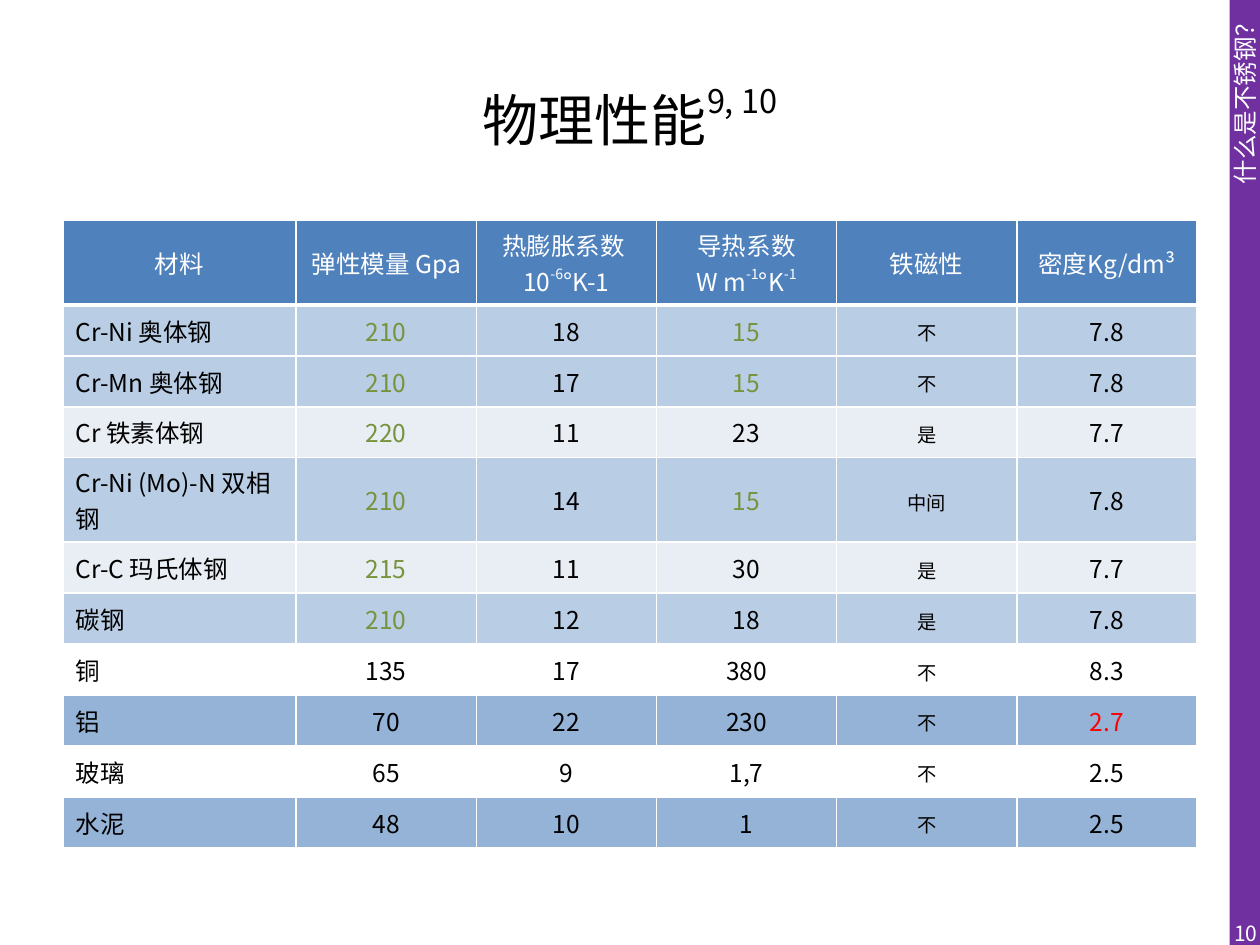
import pptx
import pptx.util
import pptx.dml.color
import pptx.enum.shapes
import pptx.enum.text
import pptx.oxml.ns
import lxml.etree

Inches = pptx.util.Inches
Align = pptx.enum.text.PP_ALIGN
Anchor = pptx.enum.text.MSO_ANCHOR
qn = pptx.oxml.ns.qn

FONT = "Noto Sans CJK SC"
HUES = {
    "white": "FFFFFF", "black": "000000", "purple": "7030A0",
    "head": "4F81BD", "pale": "B9CDE5", "grey": "E9EDF4",
    "blue": "95B3D7", "green": "77933C", "red": "FF0000",
}
HEAD = ["材料", "弹性模量 Gpa", "热膨胀系数 \n10^-6^°K-1",
        "导热系数\nW m^-1^°K^-1", "铁磁性", "密度Kg/dm³"]
ROWS = [
    ("pale", ["Cr-Ni 奥体钢", "210", "18", "15", "不", "7.8"]),
    ("pale", ["Cr-Mn 奥体钢", "210", "17", "15", "不", "7.8"]),
    ("grey", ["Cr 铁素体钢", "220", "11", "23", "是", "7.7"]),
    ("pale", ["Cr-Ni (Mo)-N 双相钢", "210", "14", "15", "中间", "7.8"]),
    ("grey", ["Cr-C 玛氏体钢", "215", "11", "30", "是", "7.7"]),
    ("pale", ["碳钢", "210", "12", "18", "是", "7.8"]),
    ("white", ["铜", "135", "17", "380", "不", "8.3"]),
    ("blue", ["铝", "70", "22", "230", "不", "2.7"]),
    ("white", ["玻璃", "65", "9", "1,7", "不", "2.5"]),
    ("blue", ["水泥", "48", "10", "1", "不", "2.5"]),
]
DATA = [("head", HEAD)] + ROWS
WIDTHS = [1.85] + [1.43] * 5
TOTAL = 4.98
TALL = 0.67
DOUBLE = (0, 4)
HIGH = (TOTAL - TALL * len(DOUBLE)) / (len(DATA) - len(DOUBLE))
MAGNET = 4
TINTS = {(row, 1): "green" for row in range(1, 7)}
TINTS.update({(row, 3): "green" for row in (1, 2, 4)})
TINTS[8, 5] = "red"


def shade(hue):
    return pptx.dml.color.RGBColor.from_string(HUES[hue])


def paint(fill, hue):
    fill.solid()
    fill.fore_color.rgb = shade(hue)


def write(frame, text, size=14, hue="black", align=Align.CENTER, space=None):
    para = frame.paragraphs[0]
    para.alignment = align
    if space:
        para.line_spacing = space
    for spot, part in enumerate(text.split("^")):
        for turn, line in enumerate(part.split("\n")):
            if turn:
                para.add_line_break()
                lxml.etree.SubElement(para._p[-1], qn("a:rPr"), sz=str(size * 100))
            if not line:
                continue
            run = para.add_run()
            run.text = line
            font = run.font
            font.size = pptx.util.Pt(size)
            font.color.rgb = shade(hue)
            font.name = FONT
            lxml.etree.SubElement(font._element, qn("a:ea"), typeface=FONT)
            if spot % 2:
                font._element.set("baseline", "50000")


def edge(cell, row):
    props = cell._tc.get_or_add_tcPr()
    sizes = {"L": 1, "R": 1, "T": 3 if row == 1 else 1, "B": 3 if row == 0 else 1}
    for spot, (side, size) in enumerate(sizes.items()):
        line = lxml.etree.Element(qn("a:ln" + side), w=str(pptx.util.Pt(size)))
        fill = lxml.etree.SubElement(line, qn("a:solidFill"))
        lxml.etree.SubElement(fill, qn("a:srgbClr"), val=HUES["white"])
        props.insert(spot, line)


def label(shape, text, **form):
    frame = shape.text_frame
    frame.word_wrap = True
    frame.vertical_anchor = Anchor.MIDDLE
    write(frame, text, **form)


def note(slide, text, place, **form):
    label(slide.shapes.add_textbox(*map(Inches, place)), text, **form)


def band(slide):
    bar = slide.shapes.add_shape(
        pptx.enum.shapes.MSO_SHAPE.RECTANGLE,
        Inches(9.76), 0, Inches(0.24), Inches(7.5))
    bar.shadow.inherit = False
    paint(bar.fill, "purple")
    bar.line.fill.background()
    label(bar, "什么是不锈钢？", hue="white", align=Align.RIGHT)
    bar.text_frame._txBody.bodyPr.set("vert", "vert270")


def grid(slide):
    table = slide.shapes.add_table(
        len(DATA), len(HEAD), Inches(0.5), Inches(1.75),
        Inches(sum(WIDTHS)), Inches(TOTAL)).table
    table.horz_banding = False
    for col, wide in zip(table.columns, WIDTHS):
        col.width = Inches(wide)
    for row, (fill, texts) in enumerate(DATA):
        table.rows[row].height = Inches(TALL if row in DOUBLE else HIGH)
        for col, text in enumerate(texts):
            cell = table.cell(row, col)
            form = {"hue": TINTS.get((row, col), "black" if row else "white")}
            if row and col == 0:
                form["align"] = Align.LEFT
            if row and col == MAGNET:
                form.update(size=11, space=1.15)
                cell.margin_left = cell.margin_right = Inches(0.07)
                cell.margin_top = cell.margin_bottom = 0
            write(cell.text_frame, text, **form)
            cell.vertical_anchor = Anchor.MIDDLE
            paint(cell.fill, fill)
            edge(cell, row)


def main():
    deck = pptx.Presentation()
    deck.slide_width, deck.slide_height = Inches(10), Inches(7.5)
    slide = deck.slides.add_slide(deck.slide_layouts[6])
    band(slide)
    note(slide, "物理性能^9, 10", (0.5, 0.3, 9, 1.25), size=32)
    grid(slide)
    note(slide, "10", (9.65, 7.21, 0.43, 0.4), size=12, hue="white", align=Align.RIGHT)
    deck.save("out.pptx")


if __name__ == "__main__":
    main()
